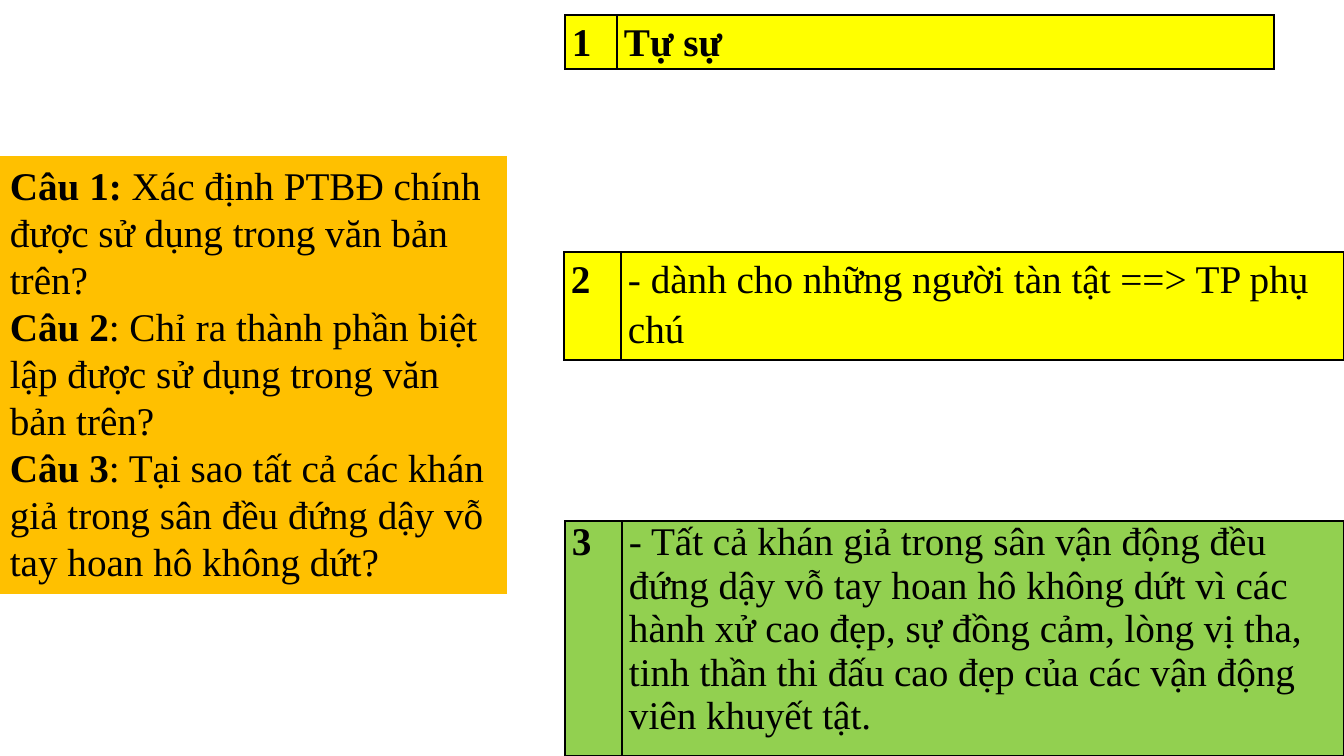
from lxml.etree import SubElement
from pptx import Presentation
from pptx.dml.color import RGBColor
from pptx.enum.shapes import MSO_SHAPE
from pptx.enum.text import MSO_ANCHOR, PP_ALIGN
from pptx.oxml.ns import qn
from pptx.util import Emu, Pt

BLACK = RGBColor(0x00, 0x00, 0x00)
ORANGE = RGBColor(0xFF, 0xC0, 0x00)
YELLOW = RGBColor(0xFF, 0xFF, 0x00)
GREEN = RGBColor(0x92, 0xD0, 0x50)
FONT = "Times New Roman"
FONT_SIZE = Pt(28)
BORDER_WIDTH = Pt(1)
EMU_PER_PX = 914400 / 100.8

QUESTIONS = [
    ("Câu 1:", " Xác định PTBĐ chính được sử dụng trong văn bản trên?"),
    ("Câu 2", ": Chỉ ra thành phần biệt lập được sử dụng trong văn bản trên?"),
    ("Câu 3", ": Tại sao tất cả các khán giả trong sân đều đứng dậy vỗ tay hoan hô không dứt?"),
]
QUESTION_BOX = (0, 156, 507, 438)

# (number, answer, bold answer, fill, line spacing, (left, top, height), column widths)
ANSWERS = [
    ("1", "Tự sự", True, YELLOW, 1.15, (565, 15, 54), (52, 657)),
    ("2", "- dành cho những người tàn tật ==> TP phụ chú", False, YELLOW, 1.15,
     (564, 252, 108), (57, 723)),
    ("3", "- Tất cả khán giả trong sân vận động đều đứng dậy vỗ tay hoan hô không dứt "
          "vì các hành xử cao đẹp, sự đồng cảm, lòng vị tha, tinh thần thi đấu cao đẹp "
          "của các vận động viên khuyết tật.", False, GREEN, 1.0,
     (565, 521, 235), (57, 722)),
]


def px(length):
    return Emu(round(length * EMU_PER_PX))


def add_run(paragraph, text, bold):
    run = paragraph.add_run()
    run.text = text
    run.font.name = FONT
    run.font.size = FONT_SIZE
    run.font.bold = bold
    run.font.color.rgb = BLACK


def add_borders(cell):
    properties = cell._tc.get_or_add_tcPr()
    for side in ("a:lnL", "a:lnR", "a:lnT", "a:lnB"):
        line = SubElement(properties, qn(side), w=str(BORDER_WIDTH))
        fill = SubElement(line, qn("a:solidFill"))
        SubElement(fill, qn("a:srgbClr"), val=str(BLACK))


def add_questions(slide):
    box = slide.shapes.add_shape(MSO_SHAPE.RECTANGLE, *map(px, QUESTION_BOX))
    box.shadow.inherit = False
    box.fill.solid()
    box.fill.fore_color.rgb = ORANGE
    box.line.fill.background()
    frame = box.text_frame
    frame.word_wrap = True
    frame.vertical_anchor = MSO_ANCHOR.TOP
    for index, (label, question) in enumerate(QUESTIONS):
        paragraph = frame.add_paragraph() if index else frame.paragraphs[0]
        paragraph.alignment = PP_ALIGN.LEFT
        add_run(paragraph, label, True)
        add_run(paragraph, question, False)


def add_answer(slide, number, answer, bold, color, spacing, place, widths):
    left, top, height = place
    table = slide.shapes.add_table(
        1, len(widths), px(left), px(top), px(sum(widths)), px(height)).table
    table.first_row = table.horz_banding = False
    contents = [(number, True), (answer, bold)]
    for column, cell, width, content in zip(table.columns, table.iter_cells(), widths, contents):
        column.width = px(width)
        cell.margin_left = cell.margin_right = px(7)
        cell.margin_top = cell.margin_bottom = 0
        add_borders(cell)
        cell.fill.solid()
        cell.fill.fore_color.rgb = color
        paragraph = cell.text_frame.paragraphs[0]
        paragraph.line_spacing = spacing
        add_run(paragraph, *content)


def main():
    presentation = Presentation()
    presentation.slide_width = px(1344)
    presentation.slide_height = px(756)
    slide = presentation.slides.add_slide(presentation.slide_layouts[6])
    add_questions(slide)
    for answer in ANSWERS:
        add_answer(slide, *answer)
    presentation.save("out.pptx")


if __name__ == "__main__":
    main()
